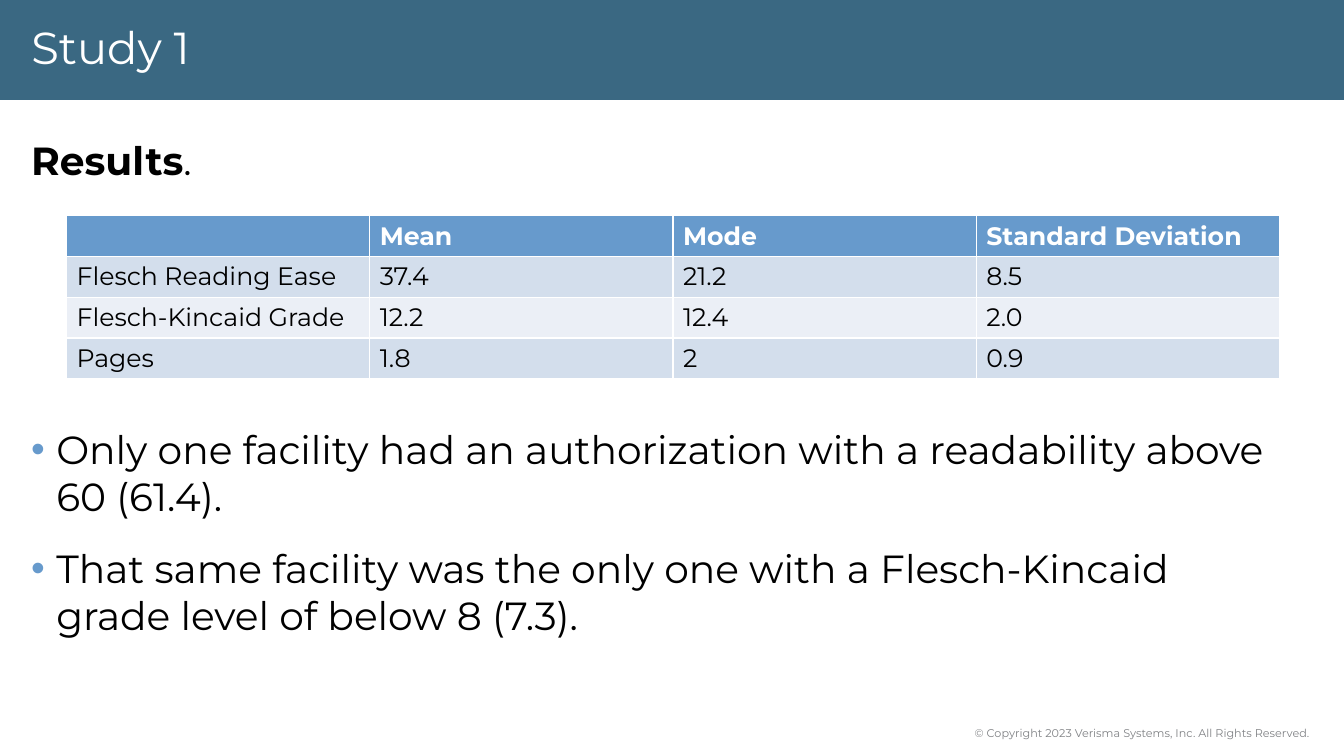
from dataclasses import dataclass

from lxml.etree import SubElement
from pptx import Presentation
from pptx.dml.color import RGBColor
from pptx.enum.shapes import MSO_SHAPE
from pptx.enum.text import MSO_ANCHOR, MSO_AUTO_SIZE, PP_ALIGN
from pptx.oxml.ns import qn
from pptx.util import Inches, Pt

WIDTH, HEIGHT = Inches(13.33), Inches(7.5)
COLORS = {
    "band": "3A6882", "accent": "679ACC", "white": "FFFFFF", "black": "000000",
    "footer": "808285", "odd_row": "D3DEEC", "even_row": "EBEFF6",
}


@dataclass(frozen=True)
class Box:
    """Position and size in percent of the slide."""
    left: float
    top: float
    width: float
    height: float

    def emu(self) -> dict[str, int]:
        return {
            "left": round(WIDTH * self.left / 100),
            "top": round(HEIGHT * self.top / 100),
            "width": round(WIDTH * self.width / 100),
            "height": round(HEIGHT * self.height / 100),
        }


@dataclass(frozen=True)
class Style:
    size: float
    color: str
    bold: bool = False


@dataclass(frozen=True)
class TextBlock:
    box: Box
    paragraphs: list[list[tuple[str, Style]]]
    align: PP_ALIGN = PP_ALIGN.LEFT
    bullets: bool = False


TITLE = Style(32, "white")
BODY = Style(28, "black")
BODY_BOLD = Style(28, "black", True)
FOOTER = Style(8, "footer")
HEAD_CELL = Style(18, "white", True)
CELL = Style(18, "black")

BAND_BOX = Box(0, 0, 100, 13.2)
TITLE_BOX = Box(1.58, 1.33, 95.2, 10.53)
TABLE_BOX = Box(4.95, 28.53, 90.25, 21.6)

BLOCKS = [
    TextBlock(Box(70.45, 95.47, 27.76, 4.93),
              [[("© Copyright 2023 Verisma Systems, Inc. All Rights Reserved.", FOOTER)]],
              align=PP_ALIGN.RIGHT),
    TextBlock(Box(1.58, 17.33, 95.2, 8), [[("Results", BODY_BOLD), (".", BODY)]]),
    TextBlock(Box(1.58, 55.6, 95.2, 32), [
        [("Only one facility had an authorization with a readability above 60 (61.4).", BODY)],
        [("That same facility was the only one with a Flesch-Kincaid grade level of below 8 (7.3).",
          BODY)],
    ], bullets=True),
]

ROWS = [
    ("", "Mean", "Mode", "Standard Deviation"),
    ("Flesch Reading Ease", "37.4", "21.2", "8.5"),
    ("Flesch-Kincaid Grade", "12.2", "12.4", "2.0"),
    ("Pages", "1.8", "2", "0.9"),
]


def rgb(name: str) -> RGBColor:
    return RGBColor.from_string(COLORS[name])


def add_run(p, text: str, style: Style) -> None:
    r = p.add_run()
    r.text = text
    values = {"name": "Montserrat", "size": Pt(style.size), "bold": style.bold}
    for name, value in values.items():
        setattr(r.font, name, value)
    r.font.color.rgb = rgb(style.color)


def add_bullet(p) -> None:
    pPr = p._p.get_or_add_pPr()
    pPr.set("marL", str(Inches(0.25)))
    pPr.set("indent", str(-Inches(0.25)))
    color = SubElement(pPr, qn("a:buClr"))
    SubElement(color, qn("a:srgbClr"), val=COLORS["accent"])
    SubElement(pPr, qn("a:buFont"), typeface="Arial")
    SubElement(pPr, qn("a:buChar"), char="•")


def add_text(s, block: TextBlock) -> None:
    tf = s.shapes.add_textbox(**block.box.emu()).text_frame
    tf.word_wrap = True
    for i, runs in enumerate(block.paragraphs):
        p = tf.add_paragraph() if i else tf.paragraphs[0]
        p.alignment = block.align
        if i:
            p.space_before = Pt(18)
        if block.bullets:
            add_bullet(p)
        for text, style in runs:
            add_run(p, text, style)


def add_title(s, text: str) -> None:
    title = s.shapes.title
    for name, value in TITLE_BOX.emu().items():
        setattr(title, name, value)
    tf = title.text_frame
    frame = {"word_wrap": True, "auto_size": MSO_AUTO_SIZE.NONE,
             "vertical_anchor": MSO_ANCHOR.MIDDLE}
    for name, value in frame.items():
        setattr(tf, name, value)
    p = tf.paragraphs[0]
    p.alignment, p.line_spacing = PP_ALIGN.LEFT, 0.9
    add_run(p, text, TITLE)


def add_band(s) -> None:
    sp = s.shapes.add_shape(MSO_SHAPE.RECTANGLE, **BAND_BOX.emu())
    sp.shadow.inherit = False
    sp.fill.solid()
    sp.fill.fore_color.rgb = rgb("band")
    sp.line.fill.background()
    s.shapes.title.element.addprevious(sp.element)  # behind the title


def add_results_table(s) -> None:
    table = s.shapes.add_table(len(ROWS), len(ROWS[0]), **TABLE_BOX.emu()).table
    for i, row in enumerate(ROWS):
        fill = "accent" if i == 0 else "odd_row" if i % 2 else "even_row"
        for j, text in enumerate(row):
            cell = table.cell(i, j)
            cell.fill.solid()
            cell.fill.fore_color.rgb = rgb(fill)
            if text:
                add_run(cell.text_frame.paragraphs[0], text, CELL if i else HEAD_CELL)


def main() -> None:
    prs = Presentation()
    prs.slide_width, prs.slide_height = WIDTH, HEIGHT
    s = prs.slides.add_slide(prs.slide_layouts[5])

    # Header
    add_band(s)
    add_title(s, "Study 1")

    # Footer, heading and findings
    for block in BLOCKS:
        add_text(s, block)

    # Readability statistics
    add_results_table(s)
    prs.save("out.pptx")


if __name__ == "__main__":
    main()
